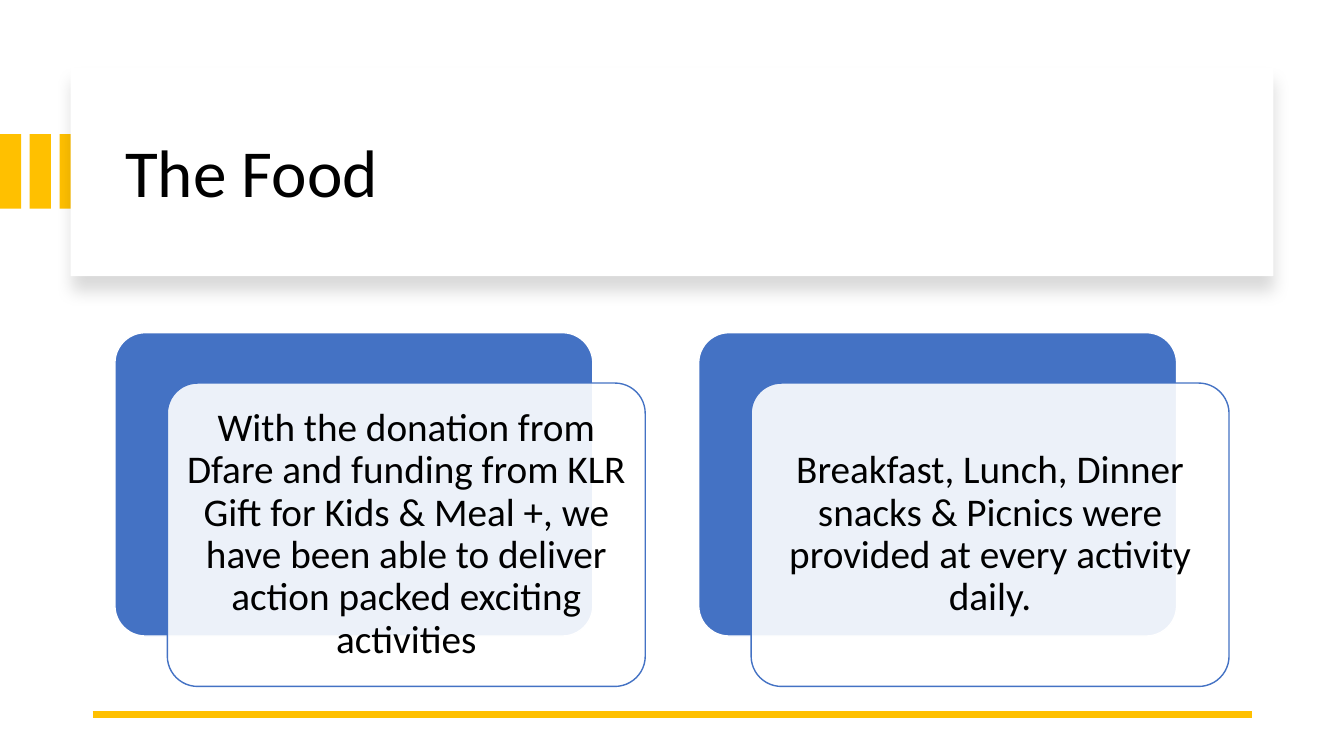
from lxml.etree import SubElement
from pptx import Presentation
from pptx.dml.color import RGBColor
from pptx.enum.shapes import MSO_CONNECTOR, MSO_SHAPE
from pptx.enum.text import MSO_ANCHOR, PP_ALIGN
from pptx.oxml.ns import qn
from pptx.util import Inches, Pt

GOLD, BLUE, WHITE, BLACK = "FFC000", "4472C4", "FFFFFF", "000000"
CARD_TEXTS = [
    "With the donation from Dfare and funding from KLR Gift for Kids & Meal +, "
    "we have been able to deliver action packed exciting activities",
    "Breakfast, Lunch, Dinner snacks & Picnics were provided at every activity daily.",
]


def color(value):
    return RGBColor.from_string(value)


class SlideBuilder:
    """Holds the slide and its text style, and draws each kind of element."""

    font = "Calibri"

    def __init__(self, slide):
        self.slide = slide

    def box(self, left, top, width, height, fill, line=None, kind=MSO_SHAPE.RECTANGLE):
        shape = self.slide.shapes.add_shape(
            kind, Inches(left), Inches(top), Inches(width), Inches(height))
        shape.shadow.inherit = False
        shape.fill.solid()
        shape.fill.fore_color.rgb = color(fill)
        if line:
            shape.line.color.rgb = color(line)
            shape.line.width = Pt(1)
        else:
            shape.line.fill.background()
        return shape

    def set_text(self, shape, text, size, align, inset):
        frame = shape.text_frame
        frame.text = text
        frame.word_wrap = True
        frame.vertical_anchor = MSO_ANCHOR.MIDDLE
        frame.margin_left = frame.margin_right = Inches(inset)
        frame.margin_top = frame.margin_bottom = Inches(inset)
        paragraph = frame.paragraphs[0]
        paragraph.alignment = align
        paragraph.line_spacing = 0.9
        font = paragraph.runs[0].font
        font.name, font.size = self.font, Pt(size)
        font.color.rgb = color(BLACK)

    def title_panel(self, text):
        panel = self.box(0.7, 0.67, 11.93, 2.07, WHITE)
        effects = panel._element.spPr.find(qn("a:effectLst"))
        shadow = SubElement(effects, qn("a:outerShdw"), blurRad=str(Pt(11)),
                            dist=str(Pt(10)), dir="5400000", algn="t", rotWithShape="0")
        shade = SubElement(shadow, qn("a:srgbClr"), val=BLACK)
        SubElement(shade, qn("a:alpha"), val="15000")
        title = self.slide.shapes.title
        title.left, title.top = Inches(1.14), Inches(0.89)
        title.width, title.height = Inches(11.13), Inches(1.7)
        self.set_text(title, text, 48, PP_ALIGN.LEFT, 0.1)
        panel._element.addnext(title._element)

    def rule(self, left, right, y):
        line = self.slide.shapes.add_connector(
            MSO_CONNECTOR.STRAIGHT, Inches(left), Inches(y), Inches(right), Inches(y))
        line.line.color.rgb = color(GOLD)
        line.line.width = Pt(4.5)
        SubElement(line._element.spPr, qn("a:effectLst"))

    def card(self, left, top, text):
        rounded = MSO_SHAPE.ROUNDED_RECTANGLE
        back = self.box(left, top, 4.74, 3.01, BLUE, WHITE, rounded)
        front = self.box(left + 0.52, top + 0.5, 4.74, 3.01, WHITE, BLUE, rounded)
        for shape in (back, front):
            shape.adjustments[0] = 0.1
        fill = front._element.spPr.find(qn("a:solidFill"))
        SubElement(fill[0], qn("a:alpha"), val="90000")
        self.set_text(front, text, 28, PP_ALIGN.CENTER, 0.03)


def main():
    presentation = Presentation()
    presentation.slide_width, presentation.slide_height = Inches(13.33), Inches(7.5)
    builder = SlideBuilder(presentation.slides.add_slide(presentation.slide_layouts[5]))
    for index in range(3):
        builder.box(index * 0.295, 1.33, 0.21, 0.74, GOLD)
    builder.title_panel("The Food")
    builder.rule(0.92, 12.42, 7.09)
    for index, text in enumerate(CARD_TEXTS):
        builder.card(1.14 + index * 5.79, 3.3, text)
    presentation.save("out.pptx")


if __name__ == "__main__":
    main()
